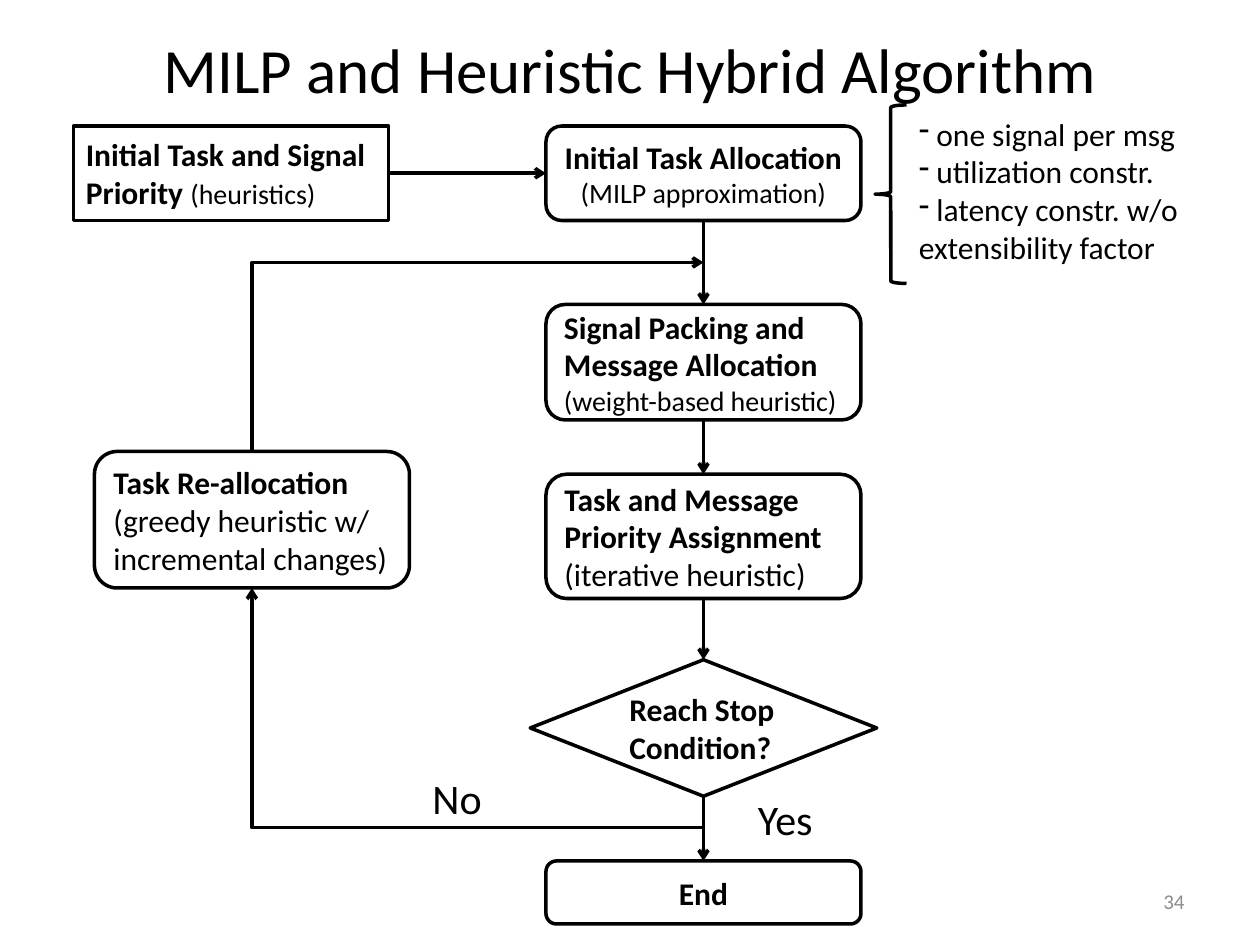
from lxml.etree import SubElement
from pptx import Presentation
from pptx.dml.color import RGBColor
from pptx.enum.shapes import MSO_CONNECTOR, MSO_SHAPE
from pptx.enum.text import MSO_ANCHOR, PP_ALIGN
from pptx.oxml.ns import qn
from pptx.util import Pt

BLACK = RGBColor(0x00, 0x00, 0x00)
WHITE = RGBColor(0xFF, 0xFF, 0xFF)
GRAY = RGBColor(0x8C, 0x8C, 0x8C)
FONT = "Calibri"
LEFT, CENTER, RIGHT = PP_ALIGN.LEFT, PP_ALIGN.CENTER, PP_ALIGN.RIGHT
TOP, MIDDLE = MSO_ANCHOR.TOP, MSO_ANCHOR.MIDDLE
ROUNDED = MSO_SHAPE.FLOWCHART_ALTERNATE_PROCESS

TITLE = "MILP and Heuristic Hybrid Algorithm"
# A paragraph is a list of runs: (text, size, bold)
# name: (shape, (left, top, width, height), alignment, paragraphs)
STEPS = {
    "priority": (MSO_SHAPE.RECTANGLE, (42, 72, 180, 54), LEFT, [
        [("Initial Task and Signal Priority ", 18, True), ("(heuristics)", 16, False)]]),
    "allocation": (ROUNDED, (312, 72, 180, 54), CENTER, [
        [("Initial Task Allocation", 18, True)], [("(MILP approximation)", 16, False)]]),
    "packing": (ROUNDED, (312, 174, 180, 66), LEFT, [
        [("Signal Packing and Message Allocation", 18, True)],
        [("(weight-based heuristic)", 16, False)]]),
    "assignment": (ROUNDED, (312, 271, 180, 71), LEFT, [
        [("Task and Message Priority Assignment", 18, True)],
        [("(iterative heuristic)", 18, False)]]),
    "reallocation": (ROUNDED, (54, 258, 180, 78), LEFT, [
        [("Task Re-allocation", 18, True)],
        [("(greedy heuristic w/ incremental changes)", 18, False)]]),
    "decision": (MSO_SHAPE.FLOWCHART_DECISION, (303, 377, 198, 78), LEFT, [
        [("Reach Stop Condition?", 18, True)]]),
    "end": (ROUNDED, (312, 492, 180, 36), CENTER, [[("End", 18, True)]]),
}
MAIN_FLOW = ["allocation", "packing", "assignment", "decision", "end"]
RETURN_HEIGHT = 150
NO_BRANCH_BEND = -15100

BRACE = (500, 60, 18, 102)
CONSTRAINTS = [" one signal per msg", " utilization constr.",
               " latency constr. w/o extensibility factor"]
# box, paragraphs, format
LABELS = [
    ((426, 450, 47, 36), [[("Yes", 24, False)]], {"wrap": False}),
    ((240, 438, 43, 36), [[("No", 24, False)]], {"wrap": False}),
    ((516, 500.5, 168, 28.75), [[("34", 12, False)]],
     {"alignment": RIGHT, "anchor": MIDDLE, "color": GRAY}),
]


def points(values):
    return [Pt(value) for value in values]


def write(shape, paragraphs, alignment=LEFT, anchor=TOP, color=BLACK, wrap=True):
    frame = shape.text_frame
    frame.word_wrap = wrap
    frame.vertical_anchor = anchor
    for index, runs in enumerate(paragraphs):
        paragraph = frame.paragraphs[0] if index == 0 else frame.add_paragraph()
        paragraph.alignment = alignment
        for text, size, bold in runs:
            run = paragraph.add_run()
            run.text = text
            run.font.color.rgb = color
            for name, value in {"name": FONT, "size": Pt(size), "bold": bold}.items():
                setattr(run.font, name, value)


def outline(shape):
    shape.line.color.rgb = BLACK
    shape.line.width = Pt(2)


def add_step(slide, kind, box, alignment, paragraphs):
    shape = slide.shapes.add_shape(kind, *points(box))
    shape.shadow.inherit = False
    shape.fill.solid()
    shape.fill.fore_color.rgb = WHITE
    outline(shape)
    write(shape, paragraphs, alignment, MIDDLE)


def add_arrow(slide, begin, end, kind=MSO_CONNECTOR.STRAIGHT):
    connector = slide.shapes.add_connector(kind, *points((*begin, *end)))
    outline(connector)
    SubElement(connector.line._get_or_add_ln(), qn("a:tailEnd"), type="arrow")
    SubElement(connector._element.spPr, qn("a:effectLst"))
    return connector


def add_vertical_elbow(slide, begin, end, preset, bend=None):
    """Elbow arrow that leaves vertically: a quarter turn of one that leaves sideways."""
    middle_x, middle_y = (begin[0] + end[0]) / 2, (begin[1] + end[1]) / 2
    half_x, half_y = (end[1] - begin[1]) / 2, (begin[0] - end[0]) / 2
    connector = add_arrow(slide, (middle_x - half_x, middle_y - half_y),
                          (middle_x + half_x, middle_y + half_y), MSO_CONNECTOR.ELBOW)
    properties = connector._element.spPr
    properties.find(qn("a:xfrm")).set("rot", str(90 * 60000))
    geometry = properties.find(qn("a:prstGeom"))
    geometry.set("prst", preset)
    if bend is not None:
        SubElement(geometry.find(qn("a:avLst")), qn("a:gd"), name="adj1", fmla=f"val {bend}")


def side(name, across, down):
    """Point on a step's box, as fractions of its width and height."""
    left, top, width, height = STEPS[name][1]
    return left + across * width, top + down * height


def main():
    presentation = Presentation()
    presentation.slide_width, presentation.slide_height = Pt(720), Pt(540)
    slide = presentation.slides.add_slide(presentation.slide_layouts[5])

    title = slide.shapes.title
    title.left, title.top, title.width, title.height = points((36, -6, 648, 90))
    write(title, [[(TITLE, 36, False)]], CENTER, MIDDLE)

    for step in STEPS.values():
        add_step(slide, *step)

    for source, target in zip(MAIN_FLOW, MAIN_FLOW[1:]):
        add_arrow(slide, side(source, 0.5, 1), side(target, 0.5, 0))
    add_arrow(slide, side("priority", 1, 0.5), side("allocation", 0, 0.5))
    add_vertical_elbow(slide, side("decision", 0.5, 1), side("reallocation", 0.5, 1),
                       "bentConnector3", NO_BRANCH_BEND)
    add_vertical_elbow(slide, side("reallocation", 0.5, 0),
                       (side("packing", 0.5, 0)[0], RETURN_HEIGHT), "bentConnector2")

    brace = slide.shapes.add_shape(MSO_SHAPE.LEFT_BRACE, *points(BRACE))
    brace.shadow.inherit = False
    brace.fill.background()
    outline(brace)

    constraints = slide.shapes.add_textbox(*points((518, 62, 174, 94.5)))
    write(constraints, [[(text, 18, False)] for text in CONSTRAINTS])
    for paragraph in constraints.text_frame.paragraphs:
        SubElement(paragraph._p.get_or_add_pPr(), qn("a:buChar"), char="-")

    for box, paragraphs, text_format in LABELS:
        write(slide.shapes.add_textbox(*points(box)), paragraphs, **text_format)

    presentation.save("out.pptx")


if __name__ == "__main__":
    main()
